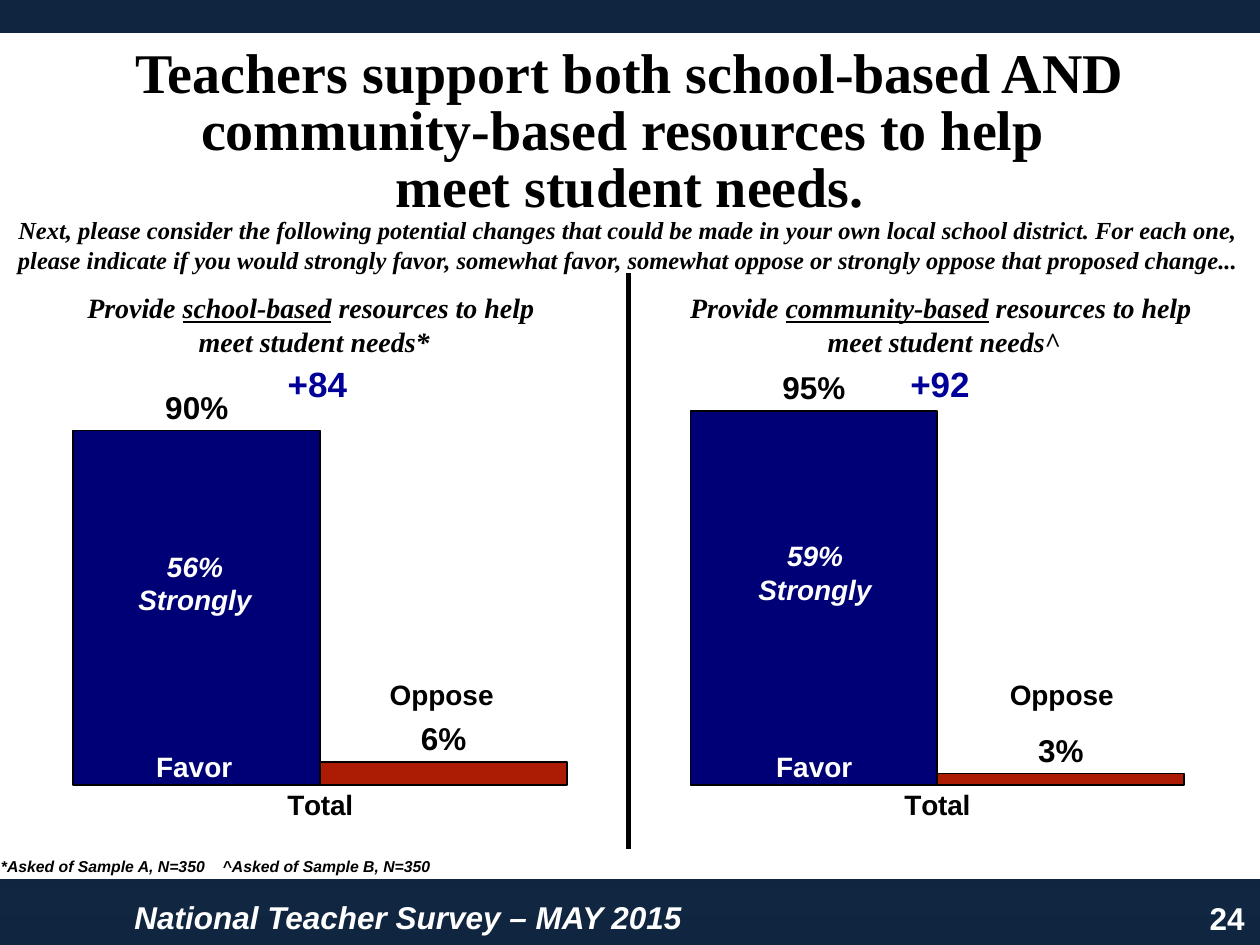
"""Build the slide on teacher support for school-based and community-based resources."""
from copy import deepcopy

from lxml import etree
from pptx import Presentation
from pptx.chart.data import CategoryChartData
from pptx.dml.color import RGBColor
from pptx.enum.chart import XL_CHART_TYPE, XL_LABEL_POSITION, XL_TICK_LABEL_POSITION, XL_TICK_MARK
from pptx.enum.shapes import MSO_CONNECTOR, MSO_SHAPE
from pptx.enum.text import MSO_AUTO_SIZE, PP_ALIGN
from pptx.oxml import parse_xml
from pptx.oxml.ns import nsdecls, qn
from pptx.util import Cm, Pt

COLUMN = XL_CHART_TYPE.COLUMN_CLUSTERED
OUTSIDE_END = XL_LABEL_POSITION.OUTSIDE_END
NO_LABELS = XL_TICK_LABEL_POSITION.NONE
NO_TICKS = XL_TICK_MARK.NONE
STRAIGHT = MSO_CONNECTOR.STRAIGHT
RECTANGLE = MSO_SHAPE.RECTANGLE
FIT_SHAPE = MSO_AUTO_SIZE.SHAPE_TO_FIT_TEXT
LEFT, CENTER, RIGHT = PP_ALIGN.LEFT, PP_ALIGN.CENTER, PP_ALIGN.RIGHT
SERIF, SANS = "Times New Roman", "Arial"
NAVY, MID_NAVY, BLACK, WHITE = "10253F", "17375E", "000000", "FFFFFF"
FAVOR, OPPOSE, NET = "000076", "AC1C04", "000099"


def color(hex_value):
    return RGBColor.from_string(hex_value)


def add_text(position, lines, size, ink=BLACK, face=SANS, italic=False, align=CENTER, spacing=None):
    """Add a bold text box; words between underscores are underlined."""
    box = slide.shapes.add_textbox(*[Cm(value) for value in position])
    frame = box.text_frame
    frame.word_wrap = True
    frame.auto_size = FIT_SHAPE
    for number, line in enumerate(lines):
        para = frame.paragraphs[0] if number == 0 else frame.add_paragraph()
        para.alignment = align
        para.line_spacing = spacing
        for index, words in enumerate(line.split("_")):
            span = para.add_run()
            span.text = words
            if index % 2:
                span.font.underline = True
        font = para.font
        font.name, font.size, font.bold, font.italic = face, Pt(size), True, italic
        font.color.rgb = color(ink)


deck = Presentation()
deck.slide_width, deck.slide_height = Cm(25.4), Cm(19.05)
slide = deck.slides.add_slide(deck.slide_layouts[6])

background = slide.background.fill
background.gradient()
background.gradient_angle = 90
first_stop = slide.element.find(".//" + qn("a:gs"))
first_stop.addnext(deepcopy(first_stop))
for stop, place, shade in zip(background.gradient_stops, (0, 0.5, 1), (NAVY, MID_NAVY, NAVY)):
    stop.position = place
    stop.color.rgb = color(shade)

panel = slide.shapes.add_shape(RECTANGLE, Cm(-0.25), Cm(0.56), Cm(25.88), Cm(17.27))
panel.shadow.inherit = False
panel.fill.solid()
panel.fill.fore_color.rgb = color(WHITE)
panel.line.color.rgb = color(NAVY)
panel.line.width = Pt(6)

add_text((22.8, 18, 2.54, 1.02), ["24"], 18, WHITE, align=RIGHT)
add_text((2.46, 17.98, 19.84, 1.02), ["National Teacher Survey – MAY 2015"],
         18, WHITE, italic=True, align=LEFT)

data = CategoryChartData(number_format="0%")
data.categories = ["Total", "Total"]
data.add_series("Series 1", (0.9, 0.95))
data.add_series("Series 2", (0.06, 0.03))
chart = slide.shapes.add_chart(COLUMN, Cm(-0.15), Cm(-0.5), Cm(25.68), Cm(18.54), data).chart
chart.has_legend = False
chart.has_title = False
chart.font.name, chart.font.size = SANS, Pt(18)
chart.font.color.rgb = color(BLACK)

category_axis, value_axis = chart.category_axis, chart.value_axis
for axis in (category_axis, value_axis):
    axis.major_tick_mark = axis.minor_tick_mark = NO_TICKS
    axis.has_major_gridlines = False
    axis.format.line.fill.background()
category_axis.tick_labels.font.name = SANS
category_axis.tick_labels.font.size = Pt(16)
category_axis.tick_labels.font.bold = True
value_axis.tick_label_position = NO_LABELS
value_axis.minimum_scale, value_axis.maximum_scale = 0, 1.05
value_axis.major_unit = 0.1

plot = chart.plots[0]
plot.gap_width, plot.overlap = 50, 0
plot.vary_by_categories = False
for series, shade in zip(plot.series, (FAVOR, OPPOSE)):
    series.format.fill.solid()
    series.format.fill.fore_color.rgb = color(shade)
    series.format.line.color.rgb = color(BLACK)
    series.format.line.width = Pt(1)
    labels = series.data_labels
    labels.show_value = True
    labels.number_format, labels.number_format_is_linked = "0%", False
    labels.position = OUTSIDE_END
    labels.font.name, labels.font.size, labels.font.bold = SANS, Pt(18), True

plot_area = chart.element.find(".//" + qn("c:plotArea"))
for old_layout in plot_area.findall(qn("c:layout")):
    plot_area.remove(old_layout)
layout = parse_xml(f"<c:layout {nsdecls('c')}><c:manualLayout/></c:layout>")
settings = {"layoutTarget": "inner", "xMode": "edge", "yMode": "edge",
            "x": "0.015", "y": "0.431", "w": "0.969", "h": "0.45"}
for name, value in settings.items():
    etree.SubElement(layout[0], qn("c:" + name)).set("val", value)
plot_area.insert(0, layout)

panels = [
    (0, 0, "school-based", "*", "56%", 10.95, "+84", 4.7),
    (12.7, 12.5, "community-based", "^", "59%", 10.74, "+92", 17.25),
]
for heading_left, shift, resource, mark, strongly, strongly_top, net, net_left in panels:
    add_text((heading_left, 5.74, 12.67, 1.63),
             [f"Provide _{resource}_ resources to help ", f"meet student needs{mark}"],
             16, face=SERIF, italic=True)
    add_text((1.4 + shift, 14.99, 5.03, 0.94), ["Favor"], 16, WHITE)
    add_text((1.43 + shift, strongly_top, 5, 1.63), [strongly, "Strongly"], 16, WHITE, italic=True)
    add_text((6.38 + shift, 13.54, 5.05, 0.94), ["Oppose"], 16)
    add_text((net_left, 7.19, 3.4, 1.12), [net], 20, NET)

add_text((0, 0.84, 25.4, 3.73),
         ["Teachers support both school-based AND community-based resources to help ",
          "meet student needs."], 32, face=SERIF, spacing=0.85)

divider = slide.shapes.add_connector(STRAIGHT, Cm(12.67), Cm(5.51), Cm(12.67), Cm(17.12))
divider.line.color.rgb = color(BLACK)
divider.line.width = Pt(3)
etree.SubElement(divider.element.spPr, qn("a:effectLst"))

add_text((-0.03, 4.22, 25.4, 1.45),
         ["Next, please consider the following potential changes that could be made in your own "
          "local school district. For each one, please indicate if you would strongly favor, "
          "somewhat favor, somewhat oppose or strongly oppose that proposed change..."],
         14, face=SERIF, italic=True)
add_text((-0.23, 17.15, 10.11, 0.64), ["*Asked of Sample A, N=350\u00a0\u00a0 ^Asked of Sample B, N=350".replace("\u00a0\u00a0 ", "\t")],
         9, italic=True, align=LEFT)
note = slide.shapes[-1].text_frame.paragraphs[0]
tabs = etree.SubElement(note._p.get_or_add_pPr(), qn("a:tabLst"))
note._p.pPr.insert(0, tabs)
etree.SubElement(tabs, qn("a:tab"), pos=str(Cm(4.47)), algn="l")

deck.save("out.pptx")
